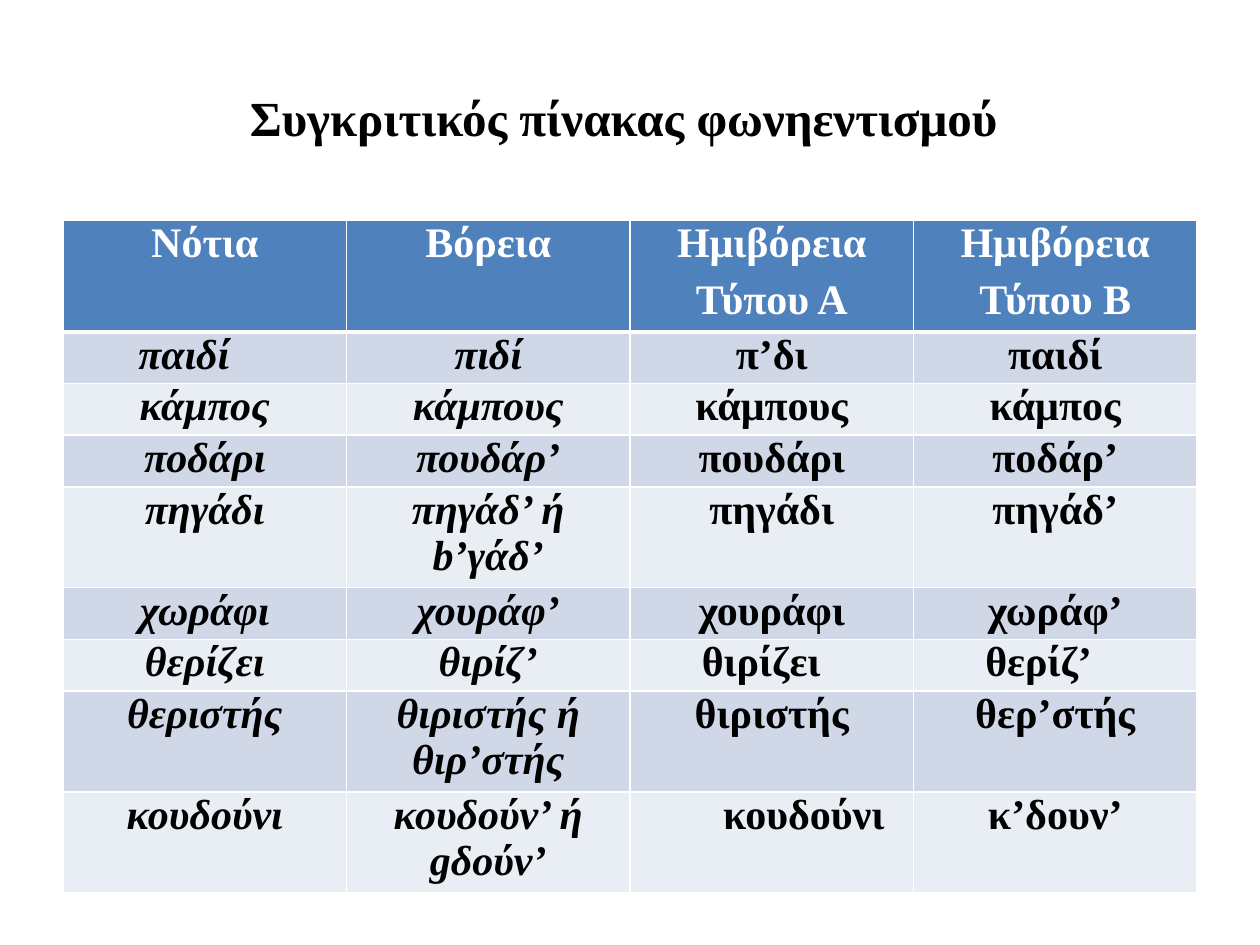
from dataclasses import dataclass

from lxml import etree
from pptx import Presentation
from pptx.dml.color import RGBColor
from pptx.enum.text import MSO_ANCHOR, PP_ALIGN
from pptx.oxml.ns import qn
from pptx.util import Inches, Pt

CENTER = PP_ALIGN.CENTER
LEFT = PP_ALIGN.LEFT
MIDDLE = MSO_ANCHOR.MIDDLE


@dataclass(frozen=True)
class Theme:
    font: str = "Times New Roman"
    title_size: int = 28
    cell_size: int = 24
    text: str = "000000"
    white: str = "FFFFFF"
    header: str = "4F81BD"
    bands: tuple = ("D0D8E8", "E9EDF4")
    thin: int = 1
    thick: int = 3


THEME = Theme()

TITLE = "Συγκριτικός πίνακας φωνηεντισμού"
HEADERS = ["Νότια", "Βόρεια", "Ημιβόρεια\nΤύπου Α", "Ημιβόρεια\nΤύπου Β"]
WORDS = [
    ["παιδί", "πιδί", "π’δι", "παιδί"],
    ["κάμπος", "κάμπους", "κάμπους", "κάμπος"],
    ["ποδάρι", "πουδάρ’", "πουδάρι", "ποδάρ’"],
    ["πηγάδι", "πηγάδ’ ή b’γάδ’", "πηγάδι", "πηγάδ’"],
    ["χωράφι", "χουράφ’", "χουράφι", "χωράφ’"],
    ["θερίζει", "θιρίζ’", "θιρίζει", "θερίζ’"],
    ["θεριστής", "θιριστής ή θιρ’στής", "θιριστής", "θερ’στής"],
    ["κουδούνι", "κουδούν’ ή gδούν’", "κουδούνι", "κ’δουν’"],
]
ITALIC_COLUMNS = (0, 1)
# Table positions (row, column) whose text is set off from the usual centre
LEFT_INDENTS = {(6, 2): 0.5, (6, 3): 0.5, (8, 2): 0.67}
RIGHT_INDENTS = {(1, 0): 0.33}
CELL_MARGIN = 0.07
ROW_HEIGHT = 0.41


def style_paragraph(para, size, color, italic=False):
    font = para.font
    font.name = THEME.font
    font.size = Pt(size)
    font.bold = True
    font.italic = italic
    font.color.rgb = RGBColor.from_string(color)


def set_borders(cell, top, bottom):
    properties = cell._tc.get_or_add_tcPr()
    widths = {"a:lnL": THEME.thin, "a:lnR": THEME.thin, "a:lnT": top, "a:lnB": bottom}
    for tag, width in widths.items():
        line = etree.SubElement(properties, qn(tag), w=str(Pt(width)))
        fill = etree.SubElement(line, qn("a:solidFill"))
        etree.SubElement(fill, qn("a:srgbClr"), val=THEME.white)


def add_title(page, left, top, width, height):
    box = page.shapes.add_textbox(left, top, width, height)
    frame = box.text_frame
    frame.word_wrap = True
    frame.vertical_anchor = MIDDLE
    frame.margin_right = Inches(0.2)
    para = frame.paragraphs[0]
    para.text = TITLE
    para.alignment = CENTER
    style_paragraph(para, THEME.title_size, THEME.text)


def fill_cell(cell, text, row, column):
    is_header = row == 0
    set_borders(
        cell,
        top=THEME.thick if row == 1 else THEME.thin,
        bottom=THEME.thick if is_header else THEME.thin,
    )
    background = THEME.header if is_header else THEME.bands[(row - 1) % 2]
    cell.fill.solid()
    cell.fill.fore_color.rgb = RGBColor.from_string(background)

    position = (row, column)
    cell.margin_left = Inches(CELL_MARGIN + LEFT_INDENTS.get(position, 0))
    cell.margin_right = Inches(CELL_MARGIN + RIGHT_INDENTS.get(position, 0))
    cell.margin_top = cell.margin_bottom = 0

    cell.text_frame.text = text
    for para in cell.text_frame.paragraphs:
        para.alignment = LEFT if position in LEFT_INDENTS else CENTER
        para.space_after = Pt(6)
        style_paragraph(
            para,
            THEME.cell_size,
            THEME.white if is_header else THEME.text,
            italic=not is_header and column in ITALIC_COLUMNS,
        )


def add_vowel_table(page, left, top, width):
    rows = [HEADERS] + WORDS
    height = Inches(ROW_HEIGHT * len(rows))
    table = page.shapes.add_table(
        len(rows), len(HEADERS), left, top, width, height
    ).table
    for table_row in table.rows:
        table_row.height = Inches(ROW_HEIGHT)
    for row, texts in enumerate(rows):
        for column, text in enumerate(texts):
            fill_cell(table.cell(row, column), text, row, column)


def main():
    deck = Presentation()
    deck.slide_width = Inches(10)
    deck.slide_height = Inches(7.5)
    page = deck.slides.add_slide(deck.slide_layouts[6])

    # Title above the comparison table
    add_title(page, Inches(0.5), Inches(0.3), Inches(9), Inches(1.25))
    add_vowel_table(page, Inches(0.5), Inches(1.75), Inches(9))

    deck.save("out.pptx")


if __name__ == "__main__":
    main()
